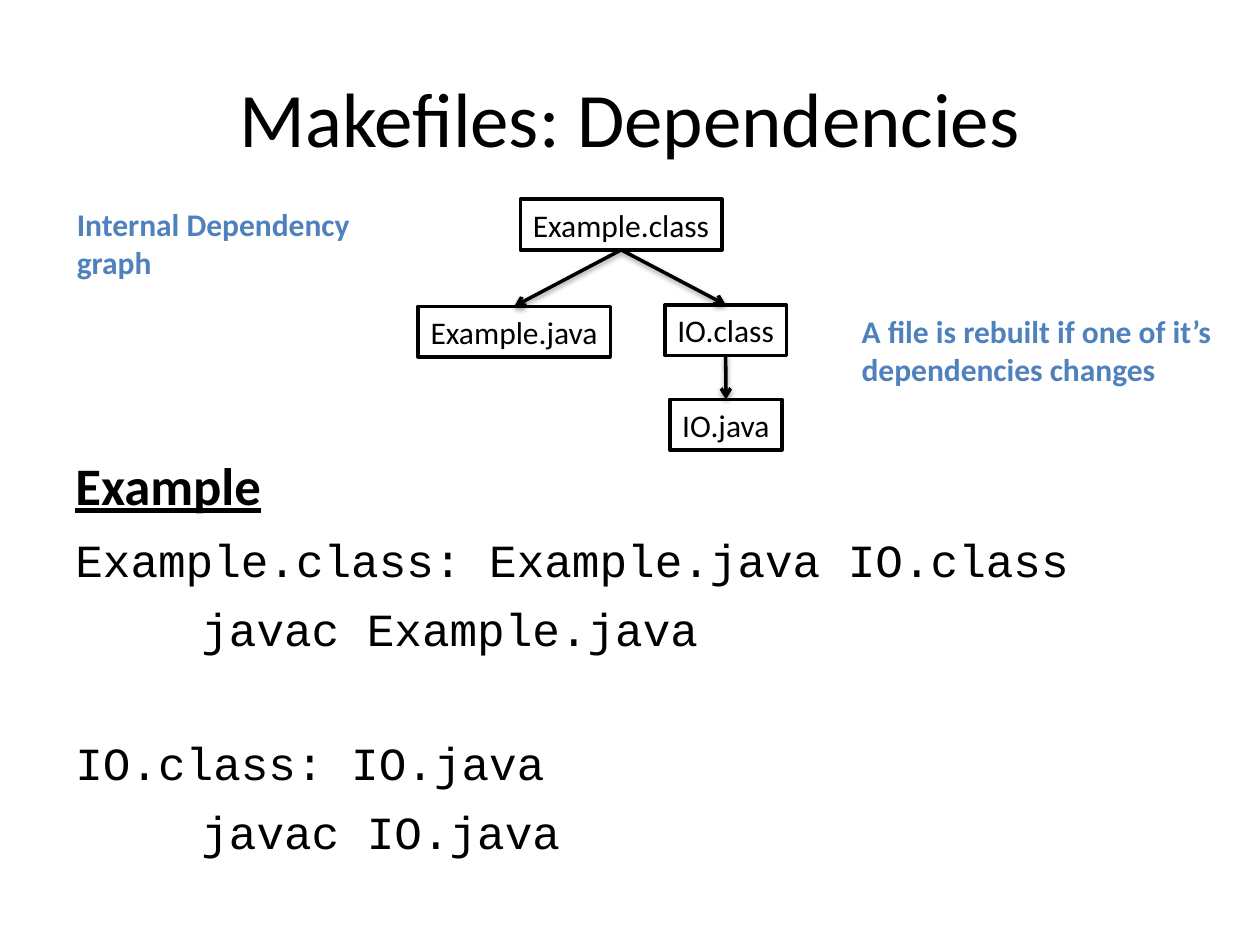
import pptx
import pptx.util
import pptx.dml.color
import pptx.enum.shapes
import pptx.enum.text
import pptx.oxml
import pptx.oxml.ns

Pt = pptx.util.Pt
LEFT = pptx.enum.text.PP_ALIGN.LEFT
BLACK, WHITE, BLUE = "000000", "FFFFFF", "4F81BD"


def color(hex_string):
    return pptx.dml.color.RGBColor.from_string(hex_string)


def write(paragraph, text, size, hex_string, name="Calibri", bold=False):
    paragraph.text = text
    paragraph.alignment = LEFT
    font = paragraph.font
    font.name, font.size, font.bold = name, Pt(size), bold
    font.color.rgb = color(hex_string)


presentation = pptx.Presentation()
presentation.slide_width, presentation.slide_height = Pt(720), Pt(540)
slide = presentation.slides.add_slide(presentation.slide_layouts[5])

# Title
title = slide.shapes.title
title.left, title.top, title.width, title.height = Pt(36), Pt(21.6), Pt(648), Pt(90)
title.text_frame.vertical_anchor = pptx.enum.text.MSO_ANCHOR.MIDDLE
write(title.text_frame.paragraphs[0], "Makefiles: Dependencies", 44, BLACK)
title.text_frame.paragraphs[0].alignment = pptx.enum.text.PP_ALIGN.CENTER

# Makefile rules: text, size, font, bold, space before, left margin
lines = [
    ("Example", 30.1, "Calibri", True, 0, 0),
    ("Example.class: Example.java IO.class", 26.3, "Courier New", False, 8.7, 0),
    ("javac Example.java", 26.3, "Courier New", False, 7.8, 72),
    ("IO.class: IO.java", 26.3, "Courier New", False, 45.4, 0),
    ("javac IO.java", 26.3, "Courier New", False, 7.8, 72),
]
rules = slide.shapes.add_textbox(Pt(36), Pt(255.2), Pt(648), Pt(228))
frame = rules.text_frame
frame.word_wrap = True
for index, (text, size, name, bold, space, margin) in enumerate(lines):
    paragraph = frame.paragraphs[0] if index == 0 else frame.add_paragraph()
    write(paragraph, text, size, BLACK, name, bold)
    paragraph.space_before = Pt(space)
    paragraph._p.get_or_add_pPr().set("marL", str(Pt(margin)))
frame.paragraphs[0].font.underline = True

# File boxes of the dependency graph: left, top, width
files = {
    "Example.class": (297.4, 113.8, 115.2),
    "Example.java": (239, 175, 109.8),
    "IO.class": (380, 174.2, 69.4),
    "IO.java": (382.8, 228.2, 64),
}
boxes = {}
for name, (left, top, width) in files.items():
    box = slide.shapes.add_shape(
        pptx.enum.shapes.MSO_SHAPE.RECTANGLE, Pt(left), Pt(top), Pt(width), Pt(29)
    )
    box.shadow.inherit = False
    box.fill.solid()
    box.fill.fore_color.rgb = color(WHITE)
    box.line.color.rgb = color(BLACK)
    box.line.width = Pt(2)
    box.text_frame.word_wrap = False
    write(box.text_frame.paragraphs[0], name, 18, BLACK)
    boxes[name] = box

# Arrows from the bottom of each file to the top of what it depends on
dependencies = [
    ("Example.class", "Example.java"),
    ("Example.class", "IO.class"),
    ("IO.class", "IO.java"),
]
namespace = pptx.oxml.ns.nsdecls("a")
for target, source in dependencies:
    arrow = slide.shapes.add_connector(
        pptx.enum.shapes.MSO_CONNECTOR.STRAIGHT, 0, 0, 0, 0
    )
    arrow.begin_connect(boxes[target], 2)
    arrow.end_connect(boxes[source], 0)
    arrow.line.color.rgb = color(BLACK)
    arrow.line.width = Pt(2)
    arrow.line._get_or_add_ln().append(
        pptx.oxml.parse_xml(f'<a:tailEnd {namespace} type="arrow"/>')
    )
    arrow._element.spPr.append(pptx.oxml.parse_xml(
        f'<a:effectLst {namespace}><a:outerShdw blurRad="{Pt(3.1)}" dist="{Pt(1.6)}"'
        ' dir="5400000" rotWithShape="0"><a:srgbClr val="000000">'
        '<a:alpha val="38000"/></a:srgbClr></a:outerShdw></a:effectLst>'
    ))

# Blue notes beside the graph
notes = [
    (36.8, 113.8, 216.7, ["Internal Dependency graph"]),
    (485.3, 175, 222, ["A file is rebuilt if one of it’s", "dependencies changes"]),
]
for left, top, width, texts in notes:
    note = slide.shapes.add_textbox(Pt(left), Pt(top), Pt(width), Pt(50.4))
    note.text_frame.word_wrap = len(texts) == 1
    for index, text in enumerate(texts):
        frame = note.text_frame
        paragraph = frame.paragraphs[0] if index == 0 else frame.add_paragraph()
        write(paragraph, text, 18, BLUE, bold=True)

presentation.save("out.pptx")
